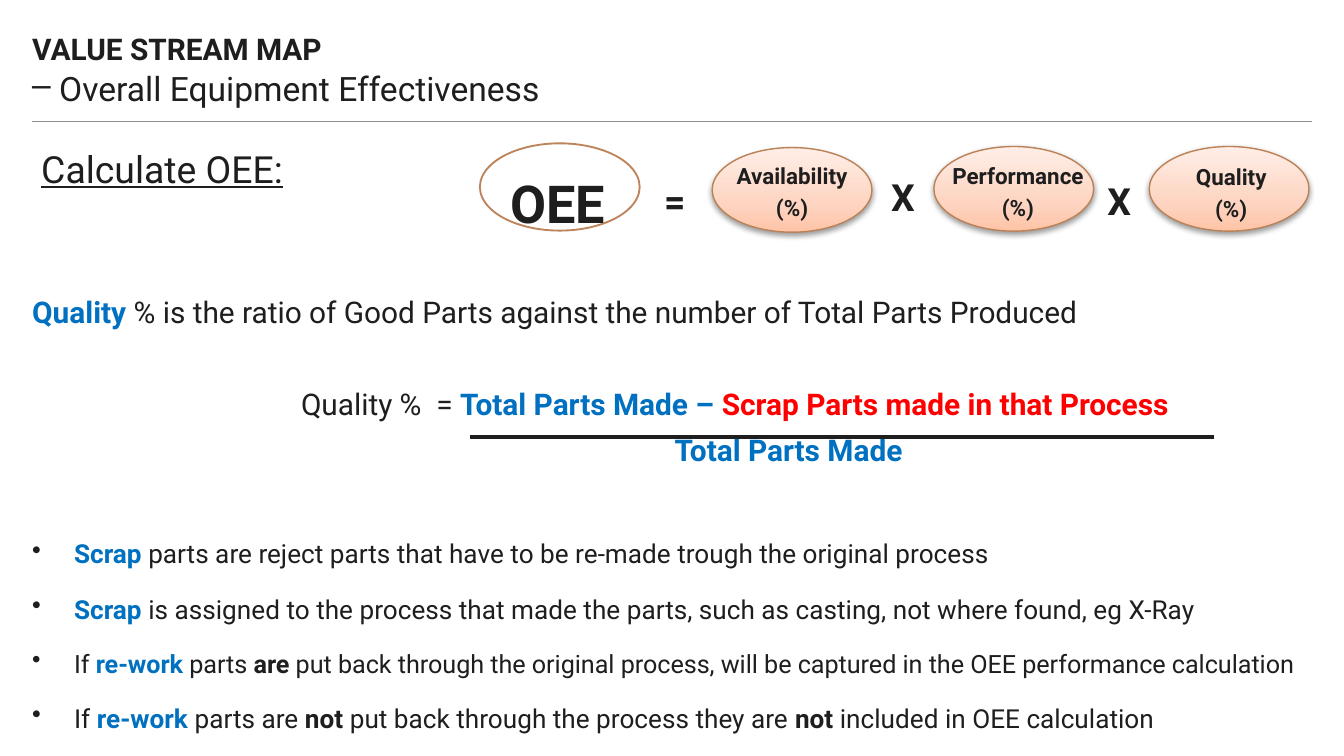
from copy import deepcopy

from lxml import etree
from pptx import Presentation
from pptx.dml.color import RGBColor
from pptx.enum.shapes import MSO_CONNECTOR, MSO_SHAPE
from pptx.enum.text import PP_ALIGN
from pptx.oxml.ns import qn
from pptx.util import Cm, Pt

CENTER, LEFT = PP_ALIGN.CENTER, PP_ALIGN.LEFT
ELLIPSE, STRAIGHT = MSO_SHAPE.OVAL, MSO_CONNECTOR.STRAIGHT

FONT = "Roboto"
INK, BLUE, RED = "1E1E1E", "0070C0", "FF0000"
RULE, WHITE = "8E8E8E", "FFFFFF"
OUTLINE, TERM_OUTLINE = "BD845B", "BB8157"
PEACH_STOPS = [(0, "FEC4A7"), (0.35, "FDD5C2"), (1, "FFEEE7")]
INSET = (0.25, 0.13)


def color(hex_value):
    return RGBColor.from_string(hex_value)


def add_box(page, left, top, width, height, inset=(0, 0), wrap=True):
    box = page.shapes.add_textbox(Cm(left), Cm(top), Cm(width), Cm(height))
    frame = box.text_frame
    frame.word_wrap = wrap
    frame.margin_left = frame.margin_right = Cm(inset[0])
    frame.margin_top = frame.margin_bottom = Cm(inset[1])
    return frame


def add_para(frame, spans, size, before=0, spacing=1.0, align=LEFT,
             margin=0, bullet=None):
    """Add a paragraph; each span is (text, color, bold)."""
    para = frame.paragraphs[0]
    if para.runs:
        para = frame.add_paragraph()
    para.alignment = align
    para.line_spacing = spacing
    para.space_before = Pt(before)
    properties = para._p.get_or_add_pPr()
    properties.set("marL", str(Cm(margin)))
    if bullet:
        properties.set("indent", str(-Cm(margin)))
        bullet_color = etree.SubElement(properties, qn("a:buClr"))
        etree.SubElement(bullet_color, qn("a:srgbClr"), val=INK)
        etree.SubElement(properties, qn("a:buChar"), char=bullet)
    for text, hex_value, bold in spans:
        span = para.add_run()
        span.text = text
        span.font.name = FONT
        span.font.size = Pt(size)
        span.font.bold = bold
        span.font.color.rgb = color(hex_value)
    return para


def add_line(page, left, right, y, hex_value, width):
    line = page.shapes.add_connector(STRAIGHT, Cm(left), Cm(y), Cm(right), Cm(y))
    line.line.color.rgb = color(hex_value)
    line.line.width = Pt(width)
    etree.SubElement(line._element.spPr, qn("a:effectLst"))


def add_ellipse(page, left, top, width, height, outline, weight):
    shape = page.shapes.add_shape(ELLIPSE, Cm(left), Cm(top), Cm(width), Cm(height))
    shape.shadow.inherit = False
    shape.fill.solid()
    shape.fill.fore_color.rgb = color(WHITE)
    shape.line.color.rgb = color(outline)
    shape.line.width = Pt(weight)
    return shape


def fill_peach(shape):
    """Give the shape a three-stop vertical gradient and a soft shadow."""
    shape.fill.gradient()
    shape.fill.gradient_angle = 90
    properties = shape._element.spPr
    stop_list = properties.find(qn("a:gradFill")).find(qn("a:gsLst"))
    stop_list.append(deepcopy(stop_list[0]))
    for stop, (position, hex_value) in zip(shape.fill.gradient_stops, PEACH_STOPS):
        stop.position = position
        stop.color.rgb = color(hex_value)
    shadow = etree.SubElement(
        properties.find(qn("a:effectLst")), qn("a:outerShdw"),
        blurRad=str(Pt(3.1)), dist=str(Pt(1.6)), dir="5400000", rotWithShape="0")
    shade = etree.SubElement(shadow, qn("a:srgbClr"), val="000000")
    etree.SubElement(shade, qn("a:alpha"), val="38000")


def add_header(page, left, top, width):
    title = add_box(page, left, top, 18.4, 0.81)
    add_para(title, [("VALUE STREAM MAP", INK, True)], 16)
    subtitle = add_box(page, left, top + 0.71, 18.4, 0.86)
    add_para(subtitle, [("Overall Equipment Effectiveness", INK, False)], 18,
             margin=0.51, bullet="–")
    add_line(page, left, left + width, top + 1.71, RULE, 0.5)


def add_symbol(page, text, left, top, width, height, size=20):
    frame = add_box(page, left, top, width, height, INSET)
    add_para(frame, [(text, INK, True)], size, spacing=1.2, align=CENTER)


def add_term(page, name, left, top, label_shift, label_drop):
    width, label_width = 3.02, 3.53
    fill_peach(add_ellipse(page, left, top, width, 1.6, TERM_OUTLINE, 0.75))
    label_left = left + (width - label_width) / 2 + label_shift
    frame = add_box(page, label_left, top + label_drop, label_width, 1.27, INSET)
    for text, before in ((name, 0), ("(%)", 7)):
        add_para(frame, [(text, INK, True)], 12, before, 0.7, CENTER)


def add_equation(page, left, top):
    heading = add_box(page, left, top, 5.18, 1.22, INSET, wrap=False)
    para = add_para(heading, [("Calculate OEE:", INK, False)], 20, spacing=1.2)
    para.runs[0].font.underline = True

    add_ellipse(page, left + 8.54, top + 0.25, 3.02, 1.65, OUTLINE, 1)
    add_symbol(page, "OEE", left + 8.69, top + 0.42, 2.64, 1.68, 28)
    for name, x, y, shift, drop in (
        ("Availability", 12.93, 0.33, 0, 0.28),
        ("Performance", 17.12, 0.31, 0.08, 0.3),
        ("Quality", 21.19, 0.31, 0.04, 0.33),
    ):
        add_term(page, name, left + x, top + y, shift, drop)
    for text, x, y in (("=", 11.59, 0.6), ("X", 15.9, 0.54), ("X", 19.99, 0.6)):
        add_symbol(page, text, left + x, top + y, 1.27, 1.22)


def add_explanation(page, left, top, width, height):
    frame = add_box(page, left, top, width, height)
    add_para(frame, [
        ("Quality", BLUE, True),
        (" % is the ratio of Good Parts against the number of Total Parts Produced",
         INK, False)], 16)
    add_para(frame, [
        ("Quality %  = ", INK, False),
        ("Total Parts Made – ", BLUE, True),
        ("Scrap Parts made in that Process", RED, True)], 16, 30, margin=5.08)
    add_para(frame, [("Total Parts Made", BLUE, True)], 16, 5.5, margin=12.14)

    notes = [
        (14, [("Scrap", BLUE, True),
              (" parts are reject parts that have to be re-made trough the "
               "original process", INK, False)]),
        (14, [("Scrap", BLUE, True),
              (" is assigned to the process that made the parts, such as casting, "
               "not where found, eg X-Ray", INK, False)]),
        (13.5, [("If ", INK, False), ("re-work", BLUE, True),
                (" parts ", INK, False), ("are", INK, True),
                (" put back through the original process, will be captured in the "
                 "OEE performance calculation", INK, False)]),
        (14, [("If ", INK, False), ("re-work", BLUE, True),
              (" parts are ", INK, False), ("not", INK, True),
              (" put back through the process they are ", INK, False),
              ("not", INK, True), (" included in OEE calculation", INK, False)]),
    ]
    for index, (size, spans) in enumerate(notes):
        add_para(frame, spans, size, 4.5 if index else 29, 1.5,
                 margin=0.79, bullet="•")
    add_line(page, left + 8.28, left + 22.33, top + 2.7, INK, 2)


def main():
    deck = Presentation()
    deck.slide_width, deck.slide_height = Cm(25.4), Cm(14.29)
    page = deck.slides.add_slide(deck.slide_layouts[6])
    add_header(page, 0.61, 0.58, 24.18)
    add_equation(page, 0.53, 2.46)
    add_explanation(page, 0.61, 5.56, 24.56, 8.51)
    deck.save("out.pptx")


if __name__ == "__main__":
    main()
